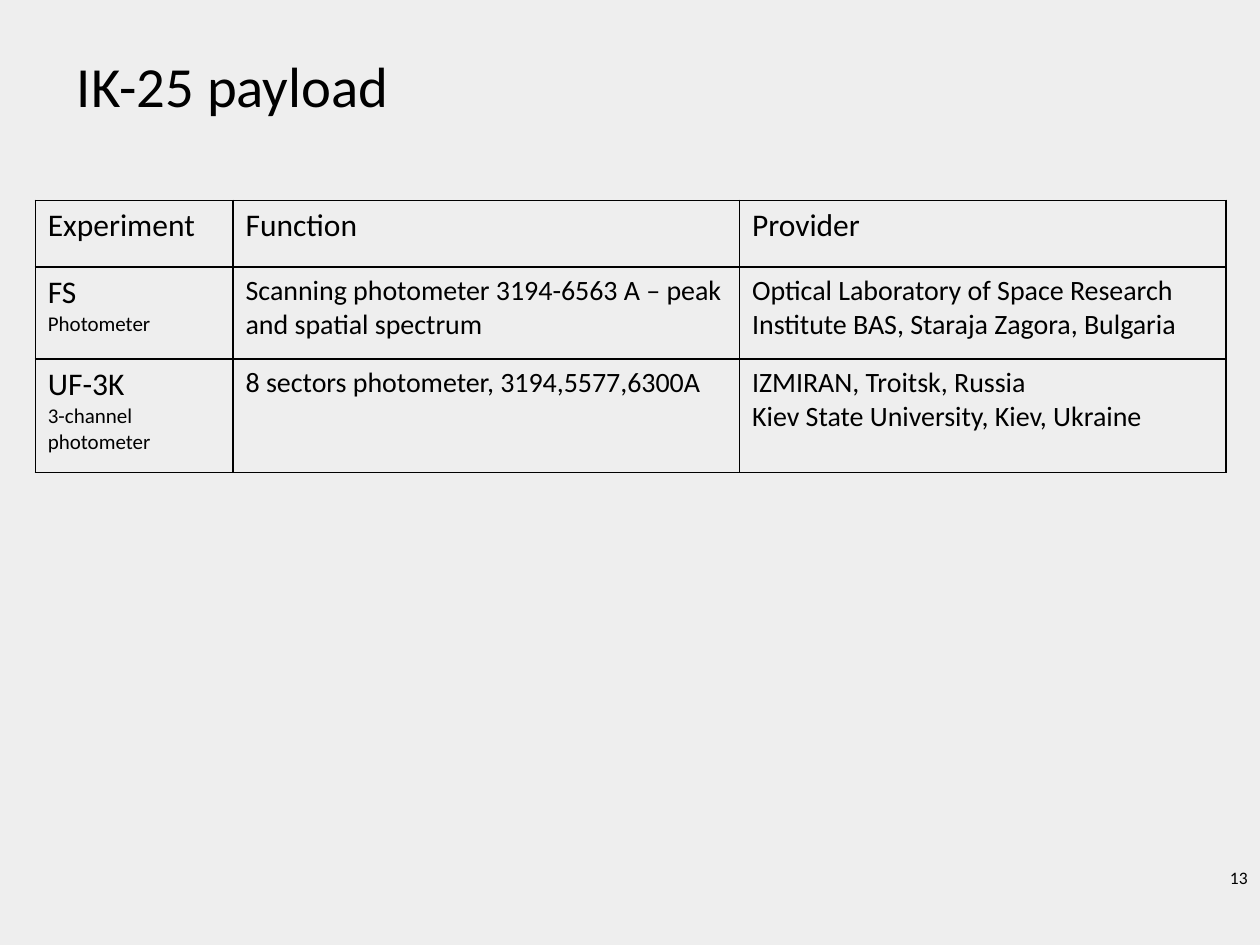
from lxml import etree
from pptx import Presentation
from pptx.dml.color import RGBColor
from pptx.enum.text import MSO_ANCHOR, PP_ALIGN
from pptx.oxml.ns import qn
from pptx.util import Inches, Pt

BOTTOM, TOP = MSO_ANCHOR.BOTTOM, MSO_ANCHOR.TOP
LEFT, RIGHT = PP_ALIGN.LEFT, PP_ALIGN.RIGHT
BLACK = RGBColor(0x00, 0x00, 0x00)
BACKGROUND = RGBColor(0xEE, 0xEE, 0xEE)
FONT = "Calibri"

TITLE = "IK-25 payload"
PAGE_NUMBER = "13"
HEADING, BODY, DETAIL = 18, 16, 12

# Each cell is a list of (text, size) paragraphs.
ROWS = [
    [[("Experiment", HEADING)], [("Function", HEADING)], [("Provider", HEADING)]],
    [
        [("FS", HEADING), ("Photometer", DETAIL)],
        [("Scanning photometer 3194-6563 A – peak and spatial spectrum", BODY)],
        [("Optical Laboratory of Space Research Institute BAS, "
          "Staraja Zagora, Bulgaria", BODY)],
    ],
    [
        [("UF-3K", HEADING), ("3-channel photometer", DETAIL)],
        [("8 sectors photometer, 3194,5577,6300A", BODY)],
        [("IZMIRAN, Troitsk, Russia", BODY),
         ("Kiev State University, Kiev, Ukraine", BODY)],
    ],
]
COLUMN_WIDTHS = [1.57, 4.02, 3.86]
ROW_HEIGHTS = [0.53, 0.73, 0.9]


def write(frame, paragraphs, align=LEFT):
    for index, (text, size) in enumerate(paragraphs):
        para = frame.paragraphs[0] if index == 0 else frame.add_paragraph()
        para.alignment = align
        span = para.add_run()
        span.text = text
        for name, value in {"name": FONT, "size": Pt(size), "bold": False}.items():
            setattr(span.font, name, value)
        span.font.color.rgb = BLACK


def add_borders(cell):
    properties = cell._tc.get_or_add_tcPr()
    for side in ("a:lnL", "a:lnR", "a:lnT", "a:lnB"):
        line = etree.SubElement(properties, qn(side), w=str(Pt(1)))
        fill = etree.SubElement(line, qn("a:solidFill"))
        etree.SubElement(fill, qn("a:srgbClr"), val=str(BLACK))


def add_payload_table(page):
    table = page.shapes.add_table(
        len(ROWS), len(COLUMN_WIDTHS), Inches(0.28), Inches(1.59),
        Inches(sum(COLUMN_WIDTHS)), Inches(sum(ROW_HEIGHTS))).table
    table.first_row = table.horz_banding = False
    for column, width in zip(table.columns, COLUMN_WIDTHS):
        column.width = Inches(width)
    for row, height, contents in zip(table.rows, ROW_HEIGHTS, ROWS):
        row.height = Inches(height)
        for cell, paragraphs in zip(row.cells, contents):
            add_borders(cell)
            cell.fill.background()
            cell.vertical_anchor = TOP
            write(cell.text_frame, paragraphs)


def main():
    deck = Presentation()
    deck.slide_width, deck.slide_height = Inches(10), Inches(7.5)
    page = deck.slides.add_slide(deck.slide_layouts[5])
    page.background.fill.solid()
    page.background.fill.fore_color.rgb = BACKGROUND

    title = page.shapes.title
    title.left, title.top = Inches(0.51), Inches(0.39)
    title.width, title.height = Inches(9), Inches(0.6)
    title.text_frame.vertical_anchor = BOTTOM
    write(title.text_frame, [(TITLE, 32.4)])

    add_payload_table(page)

    number = page.shapes.add_textbox(
        Inches(7.17), Inches(6.83), Inches(2.83), Inches(0.67))
    number.text_frame.word_wrap = True
    write(number.text_frame, [(PAGE_NUMBER, 10)], RIGHT)

    deck.save("out.pptx")


if __name__ == "__main__":
    main()
